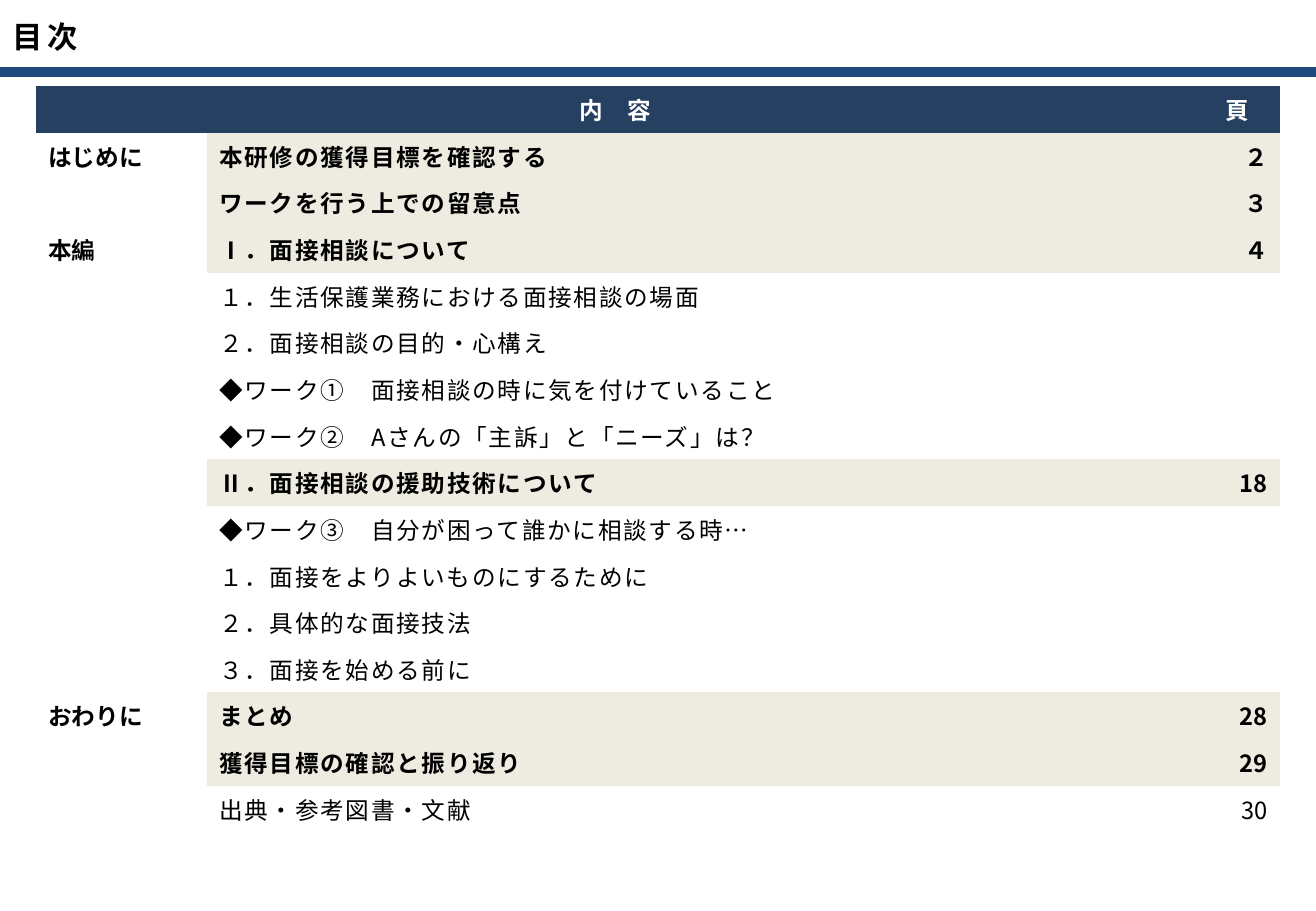
from typing import NamedTuple

from lxml import etree
from pptx import Presentation
from pptx.dml.color import RGBColor
from pptx.enum import shapes, text
from pptx.oxml.ns import qn
from pptx.util import Pt

EMU_PER_PX = 7526
FONT = "Noto Sans CJK JP"
BLACK, WHITE = "000000", "FFFFFF"
RULE_BLUE, HEADER_BLUE, BEIGE = "1F497D", "254061", "EEECE1"
NO_TABLE_STYLE = "{2D5ABB26-0587-4C30-8999-92F81FD0307C}"
COLUMN_WIDTHS = (171, 988, 85)
ROW_HEIGHT = 46
LEFT, CENTER, RIGHT = text.PP_ALIGN.LEFT, text.PP_ALIGN.CENTER, text.PP_ALIGN.RIGHT


class Entry(NamedTuple):
    content: str
    page: str = ""
    section: str = ""
    heading: bool = False


ENTRIES = (
    Entry("本研修の獲得目標を確認する", "２", "はじめに", heading=True),
    Entry("ワークを行う上での留意点", "３", heading=True),
    Entry("Ⅰ．面接相談について", "４", "本編", heading=True),
    Entry("１．生活保護業務における面接相談の場面"),
    Entry("２．面接相談の目的・心構え"),
    Entry("◆ワーク①　面接相談の時に気を付けていること"),
    Entry("◆ワーク②　Aさんの「主訴」と「ニーズ」は？"),
    Entry("Ⅱ．面接相談の援助技術について", "18", heading=True),
    Entry("◆ワーク③　自分が困って誰かに相談する時…"),
    Entry("１．面接をよりよいものにするために"),
    Entry("２．具体的な面接技法"),
    Entry("３．面接を始める前に"),
    Entry("まとめ", "28", "おわりに", heading=True),
    Entry("獲得目標の確認と振り返り", "29", heading=True),
    Entry("出典・参考図書・文献", "30"),
)


def px(length: int) -> int:
    return length * EMU_PER_PX


def rgb(color: str) -> RGBColor:
    return RGBColor.from_string(color)


def write(frame, content: str, *, size: int = 14, color: str = BLACK,
          bold: bool = False, align=LEFT, spacing: int = 0) -> None:
    paragraph = frame.paragraphs[0]
    paragraph.alignment = align
    if not content:
        # The end mark sets the line height of an empty cell.
        paragraph._p.get_or_add_endParaRPr().set("sz", str(size * 100))
        return
    run = paragraph.add_run()
    run.text = content
    run.font.name = FONT
    run.font.size = Pt(size)
    run.font.bold = bold
    run.font.color.rgb = rgb(color)
    properties = run._r.get_or_add_rPr()
    properties.set("spc", str(spacing * 100))
    etree.SubElement(properties, qn("a:ea")).set("typeface", FONT)


def fill_cell(cell, content: str, fill: str = "", **text_format) -> None:
    cell.vertical_anchor = text.MSO_ANCHOR.MIDDLE
    if fill:
        cell.fill.solid()
        cell.fill.fore_color.rgb = rgb(fill)
    else:
        cell.fill.background()
    write(cell.text_frame, content, **text_format)


def add_title(slide, content: str) -> None:
    title = slide.shapes.title
    title.left, title.top, title.width, title.height = 0, 0, px(1316), px(72)
    frame = title.text_frame
    frame.auto_size = text.MSO_AUTO_SIZE.NONE
    frame.vertical_anchor = text.MSO_ANCHOR.MIDDLE
    write(frame, content, size=18, bold=True, spacing=3)


def add_rule(slide) -> None:
    rule = slide.shapes.add_connector(
        shapes.MSO_CONNECTOR.STRAIGHT, 0, px(72), px(1316), px(72))
    rule.line.color.rgb = rgb(RULE_BLUE)
    rule.line.width = Pt(6)
    etree.SubElement(rule._element.spPr, qn("a:effectLst"))


def add_contents_table(slide) -> None:
    row_count = len(ENTRIES) + 1
    table = slide.shapes.add_table(
        row_count, len(COLUMN_WIDTHS), px(36), px(86),
        px(sum(COLUMN_WIDTHS)), px(ROW_HEIGHT * row_count)).table
    table.horz_banding = False
    table._tbl.tblPr.find(qn("a:tableStyleId")).text = NO_TABLE_STYLE
    for column, width in zip(table.columns, COLUMN_WIDTHS):
        column.width = px(width)
    for row in table.rows:
        row.height = px(ROW_HEIGHT)

    table.cell(0, 0).merge(table.cell(0, 1))
    for index, label in enumerate(("内　容", "", "頁")):
        fill_cell(table.cell(0, index), label, HEADER_BLUE,
                  color=WHITE, bold=True, align=CENTER)
    for index, entry in enumerate(ENTRIES, start=1):
        section, content, page = table.rows[index].cells
        fill = BEIGE if entry.heading else ""
        fill_cell(section, entry.section, bold=True)
        fill_cell(content, entry.content, fill, bold=entry.heading, spacing=1)
        fill_cell(page, entry.page, fill, bold=entry.heading, align=RIGHT)


def main() -> None:
    presentation = Presentation()
    presentation.slide_width, presentation.slide_height = px(1316), px(911)
    slide = presentation.slides.add_slide(presentation.slide_layouts[5])
    add_rule(slide)
    add_title(slide, "目次")
    add_contents_table(slide)
    presentation.save("out.pptx")


if __name__ == "__main__":
    main()
